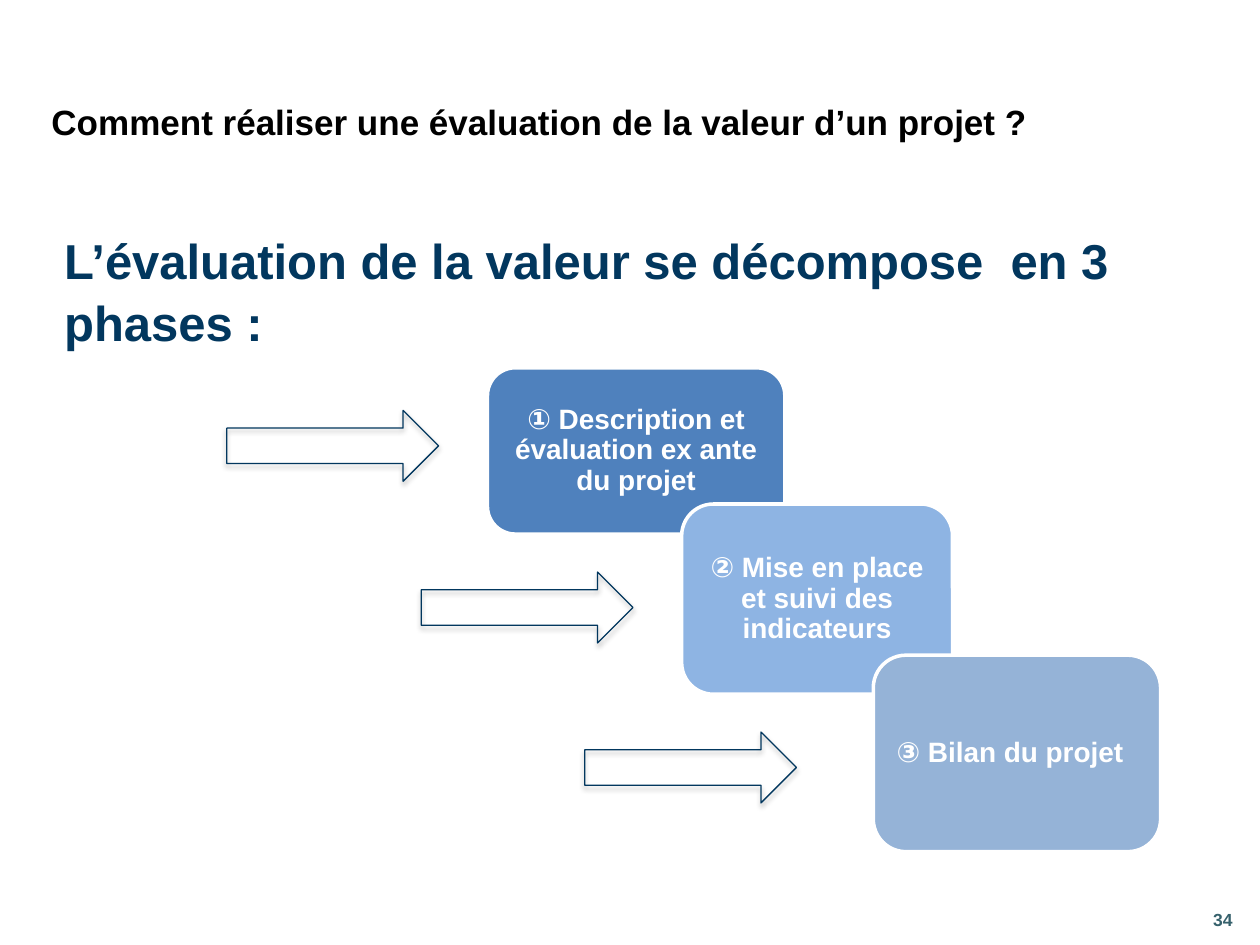
from lxml.etree import SubElement
from pptx import Presentation
from pptx.dml.color import RGBColor
from pptx.enum.shapes import MSO_SHAPE as SHAPE
from pptx.enum.text import MSO_ANCHOR as ANCHOR, PP_ALIGN as ALIGN
from pptx.oxml.ns import qn
from pptx.util import Pt

NAVY, WHITE = "02375E", "FFFFFF"
TITLE = "Comment réaliser une évaluation de la valeur d’un projet ?"
HEADLINE = "L’évaluation de la valeur se décompose  en 3 phases :"
PAGE = "34"
PHASES = [
    dict(text="① Description et évaluation ex ante du projet", fill="4F81BD",
         card=(278.6, 210.2, 169.9, 95), insets=(3.6, 3.6), arrow=(129.6, 234.5)),
    dict(text="② Mise en place et suivi des indicateurs", fill="8EB4E3",
         card=(389.5, 288, 154.8, 108.7), insets=(6.5, 6.5), arrow=(240.7, 326.9)),
    dict(text="③ Bilan du projet", fill="95B3D7",
         card=(499, 374.4, 164.2, 112.3), insets=(6.9, 14.8), arrow=(334.1, 418.3)),
]
ARROW_SIZE = (121, 40.5)


def color(hex_code):
    return RGBColor.from_string(hex_code)


def write(sp, text, size, hex_code, align=ALIGN.LEFT, anchor=ANCHOR.MIDDLE,
          insets=(7.2, 7.2), spacing=1.0):
    tf = sp.text_frame
    tf.word_wrap = True
    tf.vertical_anchor = anchor
    tf.margin_left, tf.margin_right = map(Pt, insets)
    p = tf.paragraphs[0]
    p.alignment, p.line_spacing = align, spacing
    r = p.add_run()
    r.text = text
    r.font.name, r.font.size, r.font.bold = "Arial", Pt(size), True
    r.font.color.rgb = color(hex_code)


def add_text(s, box, text, size, hex_code, **fmt):
    write(s.shapes.add_textbox(*map(Pt, box)), text, size, hex_code, **fmt)


def add_card(s, phase):
    sp = s.shapes.add_shape(SHAPE.ROUNDED_RECTANGLE, *map(Pt, phase["card"]))
    sp.shadow.inherit = False
    sp.fill.solid()
    sp.fill.fore_color.rgb = color(phase["fill"])
    sp.line.color.rgb = color(WHITE)
    sp.line.width = Pt(2)
    write(sp, phase["text"], 16, WHITE, align=ALIGN.CENTER,
          insets=phase["insets"], spacing=0.9)


def add_arrow(s, place):
    sp = s.shapes.add_shape(SHAPE.RIGHT_ARROW, *map(Pt, place + ARROW_SIZE))
    sp.fill.background()
    sp.line.color.rgb = color(NAVY)
    sp.line.width = Pt(0.75)
    sp.shadow.inherit = False
    effects = sp.element.spPr.find(qn("a:effectLst"))
    shadow = SubElement(effects, qn("a:outerShdw"), blurRad=str(Pt(3.1)),
                        dist=str(Pt(1.8)), dir="5400000", rotWithShape="0")
    black = SubElement(shadow, qn("a:srgbClr"), val="000000")
    SubElement(black, qn("a:alpha"), val="35000")


def main():
    prs = Presentation()
    prs.slide_width, prs.slide_height = Pt(720), Pt(540)
    s = prs.slides.add_slide(prs.slide_layouts[6])
    add_text(s, (686.2, 511.2, 33.8, 28.8), PAGE, 10, "36616C")
    add_text(s, (22.3, 52, 687.6, 35.3), TITLE, 20, "000000")
    add_text(s, (22.3, 126.6, 687.6, 75), HEADLINE, 28, NAVY,
             anchor=ANCHOR.TOP, insets=(14.4, 7.2), spacing=1.05)
    for phase in PHASES:
        add_card(s, phase)
    for phase in PHASES:
        add_arrow(s, phase["arrow"])
    prs.save("out.pptx")


if __name__ == "__main__":
    main()
